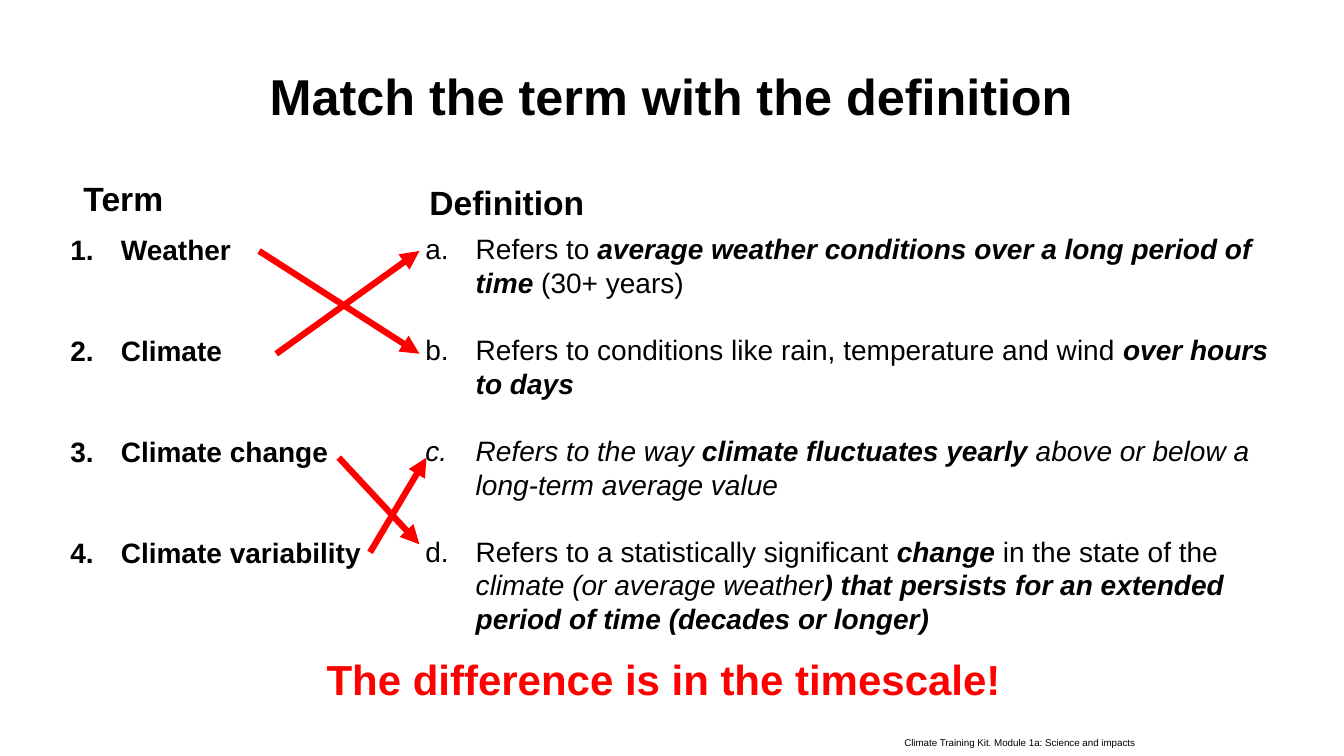
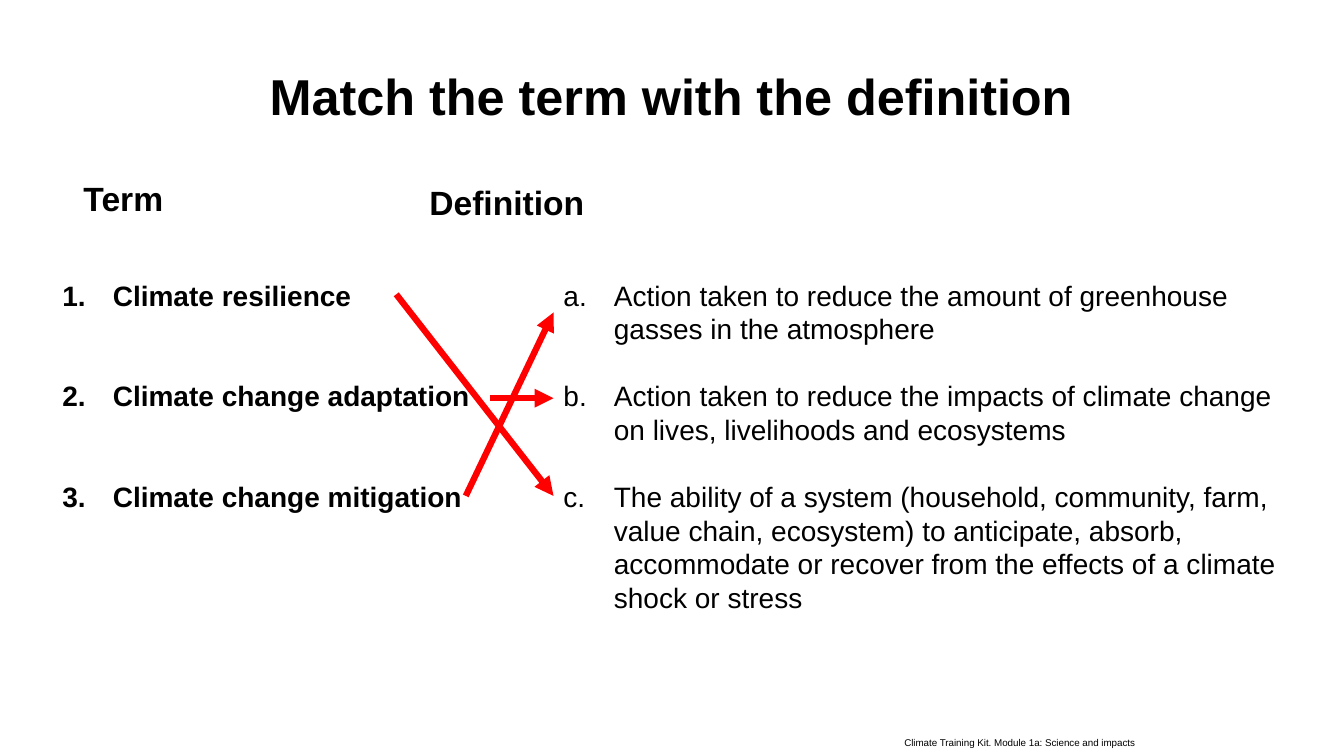
from lxml import etree
from pptx import Presentation
from pptx.dml.color import RGBColor
from pptx.enum.shapes import MSO_CONNECTOR, MSO_SHAPE
from pptx.enum.text import MSO_ANCHOR, PP_ALIGN
from pptx.oxml.ns import qn
from pptx.util import Inches, Pt

BLACK = RGBColor(0x00, 0x00, 0x00)
WHITE = RGBColor(0xFF, 0xFF, 0xFF)
RED = RGBColor(0xFF, 0x00, 0x00)
FONT = "Arial"
RECTANGLE = MSO_SHAPE.RECTANGLE
STRAIGHT = MSO_CONNECTOR.STRAIGHT
CENTER = PP_ALIGN.CENTER
LEFT = PP_ALIGN.LEFT
TOP = MSO_ANCHOR.TOP
BOTTOM = MSO_ANCHOR.BOTTOM

TITLE_BOX = (0.52, 0.6, 12.28, 0.94)
TERM_HEADING_BOX = (0.73, 1.41, 4, 0.8)
DEFINITION_HEADING_BOX = (4.16, 1.45, 4, 0.8)
FOOTER_BOX = (8.87, 7.26, 3.99, 0.22)
CONCLUSION_BOX = (2.1, 6.43, 8.97, 0.61)

LIST_SIZE = 20
LINE_HEIGHT = 24
LIST_INDENT = 0.5

PLAIN, BOLD, ITALIC, BOLD_ITALIC = "", "b", "i", "bi"

WEATHER_TERMS = ["Weather", "Climate", "Climate change", "Climate variability"]
WEATHER_DEFINITIONS = [
    [("Refers to ", PLAIN),
     ("average weather conditions over a long period of time ", BOLD_ITALIC),
     ("(30+ years)", PLAIN)],
    [("Refers to conditions like rain, temperature and wind ", PLAIN),
     ("over hours to days", BOLD_ITALIC)],
    [("Refers to the way ", ITALIC),
     ("climate fluctuates yearly ", BOLD_ITALIC),
     ("above or below a long-term average value", ITALIC)],
    [("Refers to a statistically significant ", PLAIN),
     ("change", BOLD_ITALIC),
     (" in the state of the ", PLAIN),
     ("climate (or average weather", ITALIC),
     (") that persists for an extended period of time (decades or longer)", BOLD_ITALIC)],
]
WEATHER_MATCHES = [
    ((1.97, 0.23), (3.56, 1.25)),
    ((2.14, 1.25), (3.56, 0.23)),
    ((2.76, 2.28), (3.56, 3.14)),
    ((3.07, 3.22), (3.63, 2.28)),
]

RESPONSE_TERMS = ["Climate resilience", "Climate change adaptation", "Climate change mitigation"]
RESPONSE_DEFINITIONS = [
    [("Action taken to reduce the amount of greenhouse gasses in the atmosphere", PLAIN)],
    [("Action taken to reduce the impacts of climate change on lives, livelihoods "
      "and ecosystems", PLAIN)],
    [("The ability of a system (household, community, farm, value chain, ecosystem) "
      "to anticipate, absorb, accommodate or recover from the effects of a climate "
      "shock or stress", PLAIN)],
]
RESPONSE_MATCHES = [
    ((3.41, 0.21), (4.97, 2.21)),
    ((4.34, 1.24), (4.97, 1.24)),
    ((4.1, 2.21), (4.97, 0.39)),
]


def inches(box):
    return [Inches(length) for length in box]


def add_run(paragraph, text, size, style=PLAIN, color=BLACK):
    run = paragraph.add_run()
    run.text = text
    run.font.name = FONT
    run.font.size = Pt(size)
    run.font.bold = "b" in style
    run.font.italic = "i" in style
    run.font.color.rgb = color


def write_line(holder, text, size, style=BOLD, color=BLACK, align=LEFT, anchor=TOP):
    frame = holder.text_frame
    frame.word_wrap = True
    frame.vertical_anchor = anchor
    paragraph = frame.paragraphs[0]
    paragraph.alignment = align
    add_run(paragraph, text, size, style, color)


def add_label(slide, box, text, size, **look):
    write_line(slide.shapes.add_textbox(*inches(box)), text, size, **look)


def add_title(slide, box):
    title = slide.shapes.add_shape(RECTANGLE, *inches(box))
    title.shadow.inherit = False
    title.fill.solid()
    title.fill.fore_color.rgb = WHITE
    title.line.fill.background()
    write_line(title, "Match the term with the definition", 36, align=CENTER)


def add_list(slide, box, items, numbering, blank_lines):
    frame = slide.shapes.add_textbox(*inches(box)).text_frame
    frame.word_wrap = True
    for index, item in enumerate(items):
        paragraph = frame.add_paragraph() if index else frame.paragraphs[0]
        if index:
            paragraph.space_before = Pt(blank_lines * LINE_HEIGHT)
        properties = paragraph._p.get_or_add_pPr()
        properties.set("marL", str(Inches(LIST_INDENT)))
        properties.set("indent", str(-Inches(LIST_INDENT)))
        etree.SubElement(properties, qn("a:buFont"), typeface="+mj-lt")
        etree.SubElement(properties, qn("a:buAutoNum"), type=numbering)
        for text, style in item:
            add_run(paragraph, text, LIST_SIZE, style)


def add_match_arrow(slide, box, start, end):
    left, top = box[:2]
    ends = [Inches(origin + offset)
            for point in (start, end)
            for origin, offset in zip((left, top), point)]
    arrow = slide.shapes.add_connector(STRAIGHT, *ends)
    arrow.line.color.rgb = RED
    arrow.line.width = Pt(4.5)
    etree.SubElement(arrow.line._get_or_add_ln(), qn("a:tailEnd"), type="triangle")
    etree.SubElement(arrow._element.spPr, qn("a:effectLst"))


def add_matching_slide(deck, terms_box, terms, definitions_box, definitions, matches):
    slide = deck.slides.add_slide(deck.slide_layouts[6])
    add_label(slide, FOOTER_BOX, "Climate Training Kit. Module 1a: Science and impacts",
              7, style=PLAIN)
    add_title(slide, TITLE_BOX)
    add_label(slide, TERM_HEADING_BOX, "Term", 24, anchor=BOTTOM)
    add_label(slide, DEFINITION_HEADING_BOX, "Definition", 24, anchor=BOTTOM)
    add_list(slide, terms_box, [[(term, BOLD)] for term in terms], "arabicPeriod", 2)
    add_list(slide, definitions_box, definitions, "alphaLcPeriod", 1)
    for start, end in matches:
        add_match_arrow(slide, terms_box, start, end)
    return slide


def main():
    deck = Presentation()
    deck.slide_width = Inches(13.33)
    deck.slide_height = Inches(7.5)
    weather = add_matching_slide(
        deck, (0.6, 2.26, 4, 3.64), WEATHER_TERMS,
        (4.12, 2.25, 8.69, 4.43), WEATHER_DEFINITIONS, WEATHER_MATCHES)
    add_label(weather, CONCLUSION_BOX, "The difference is in the timescale!", 30,
              color=RED, align=CENTER)
    add_matching_slide(
        deck, (0.52, 2.71, 5.12, 3.64), RESPONSE_TERMS,
        (5.49, 2.71, 7.56, 4.43), RESPONSE_DEFINITIONS, RESPONSE_MATCHES)
    deck.save("out.pptx")


if __name__ == "__main__":
    main()
